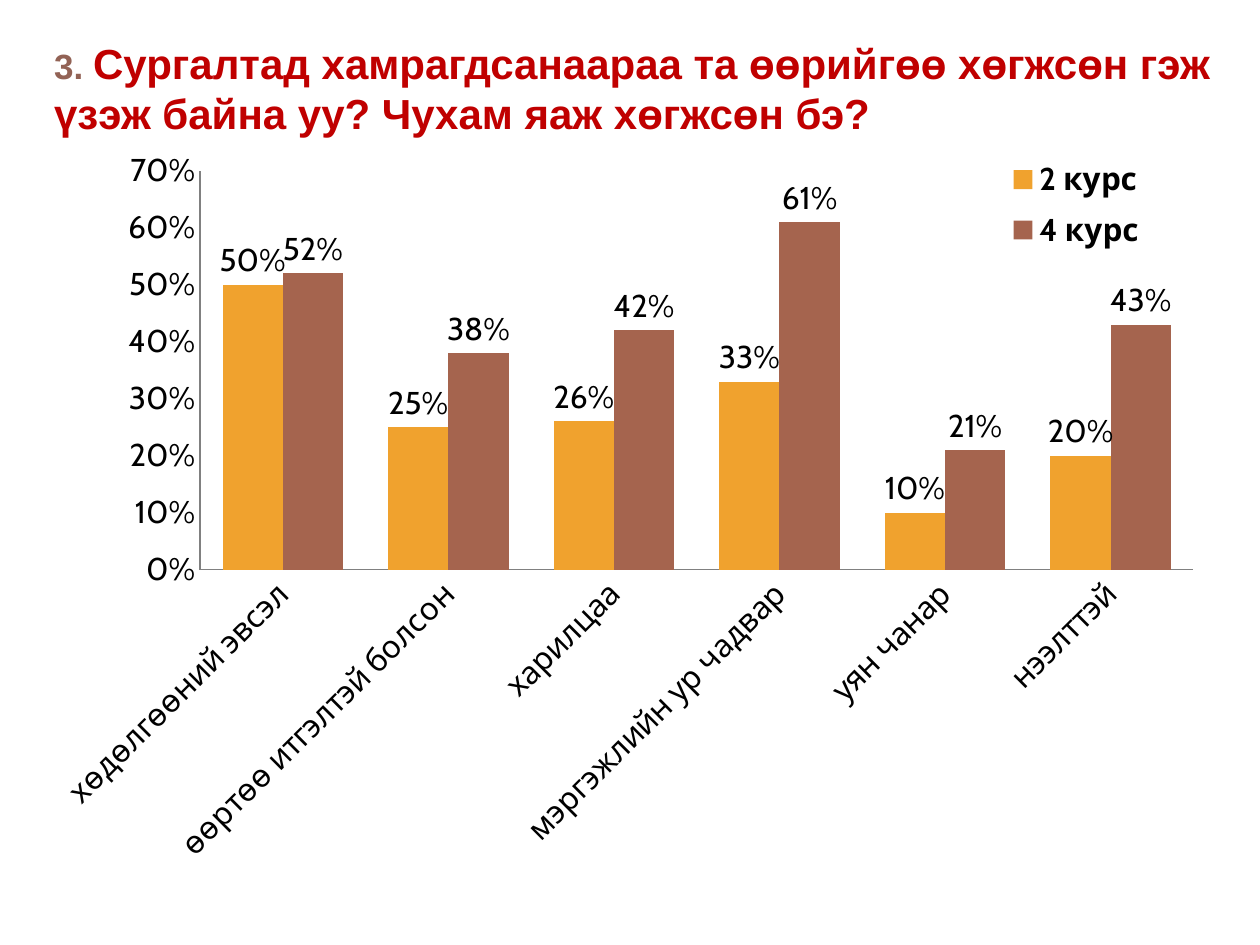
import pptx
import pptx.chart.data
import pptx.dml.color
import pptx.enum.chart
import pptx.enum.text
import pptx.oxml
import pptx.oxml.ns
import pptx.util

RGBColor = pptx.dml.color.RGBColor
BLACK = RGBColor(0x00, 0x00, 0x00)
GRAY = RGBColor(0x80, 0x80, 0x80)
TAUPE = RGBColor(0x92, 0x62, 0x55)
RED = RGBColor(0xC0, 0x00, 0x00)
ORANGE = RGBColor(0xF0, 0xA2, 0x2E)
BROWN = RGBColor(0xA5, 0x64, 0x4E)

WIDTH = pptx.util.Inches(10)
HEIGHT = pptx.util.Inches(7.5)

QUESTION = [
    ("3. ", 20, TAUPE),
    ("Сургалтад хамрагдсанаараа та өөрийгөө хөгжсөн гэж үзэж байна уу? "
     "Чухам яаж хөгжсөн бэ?", 24, RED),
]
SKILLS = ["хөдөлгөөний эвсэл", "өөртөө итгэлтэй болсон", "харилцаа",
          "мэргэжлийн ур чадвар", "уян чанар", "нээлттэй"]
COURSES = [
    ("2 курс", ORANGE, [0.50, 0.25, 0.26, 0.33, 0.10, 0.20]),
    ("4 курс", BROWN, [0.52, 0.38, 0.42, 0.61, 0.21, 0.43]),
]


def share_box(left, top, width, height):
    """Turn shares of the slide into lengths."""
    return (round(left * WIDTH), round(top * HEIGHT),
            round(width * WIDTH), round(height * HEIGHT))


def add_title(slide, box):
    title = slide.shapes.title
    title.left, title.top, title.width, title.height = box
    frame = title.text_frame
    frame.word_wrap = True
    frame.auto_size = pptx.enum.text.MSO_AUTO_SIZE.SHAPE_TO_FIT_TEXT
    frame.vertical_anchor = pptx.enum.text.MSO_ANCHOR.TOP
    paragraph = frame.paragraphs[0]
    paragraph.alignment = pptx.enum.text.PP_ALIGN.LEFT
    for text, size, color in QUESTION:
        run = paragraph.add_run()
        run.text = text
        run.font.name = "Arial"
        run.font.bold = True
        run.font.size = pptx.util.Pt(size)
        run.font.color.rgb = color


def manual_layout(left, top, width, height, inner=False):
    """Make a layout element from shares of the chart's size."""
    target = '<c:layoutTarget val="inner"/>' if inner else ""
    values = {"x": left, "y": top, "w": width, "h": height}
    sizes = "".join(f'<c:{name} val="{value}"/>' for name, value in values.items())
    return pptx.oxml.parse_xml(
        f'<c:layout {pptx.oxml.ns.nsdecls("c")}><c:manualLayout>{target}'
        '<c:xMode val="edge"/><c:yMode val="edge"/>'
        f'{sizes}</c:manualLayout></c:layout>')


def remove_layout(element):
    for layout in element.findall(pptx.oxml.ns.qn("c:layout")):
        element.remove(layout)


def place_plot(chart, *shares):
    plot_area = chart.plots[0]._element.getparent()
    remove_layout(plot_area)
    plot_area.insert(0, manual_layout(*shares, inner=True))


def add_legend(chart, *shares):
    chart.has_legend = True
    legend = chart.legend
    legend.position = pptx.enum.chart.XL_LEGEND_POSITION.BOTTOM
    legend.include_in_layout = False
    legend.font.bold = True
    element = legend._element
    remove_layout(element)
    position = element.find(pptx.oxml.ns.qn("c:legendPos"))
    position.addnext(manual_layout(*shares))


def format_axes(chart):
    for axis in (chart.category_axis, chart.value_axis):
        axis.has_major_gridlines = False
        axis.major_tick_mark = pptx.enum.chart.XL_TICK_MARK.NONE
        axis.minor_tick_mark = pptx.enum.chart.XL_TICK_MARK.NONE
        axis.format.line.color.rgb = GRAY
        axis.format.line.width = pptx.util.Pt(0.75)
    value_axis = chart.value_axis
    value_axis.minimum_scale = 0
    value_axis.maximum_scale = 0.7
    value_axis.major_unit = 0.1
    value_axis.tick_labels.number_format = "0%"
    value_axis.tick_labels.number_format_is_linked = False
    labels = chart.category_axis.tick_labels
    labels.font.size = pptx.util.Pt(18)
    properties = chart.category_axis._element.find(
        pptx.oxml.ns.qn("c:txPr")).find(pptx.oxml.ns.qn("a:bodyPr"))
    properties.set("rot", str(-45 * 60000))
    properties.set("vert", "horz")


def format_bars(plot):
    plot.gap_width = 75
    plot.overlap = 0
    plot.vary_by_categories = False
    for series, (_, color, _) in zip(plot.series, COURSES):
        series.format.fill.solid()
        series.format.fill.fore_color.rgb = color
        series.invert_if_negative = False
        labels = series.data_labels
        labels.show_value = True
        labels.number_format = "0%"
        labels.number_format_is_linked = False
        labels.position = pptx.enum.chart.XL_LABEL_POSITION.OUTSIDE_END


def add_skill_chart(slide, box):
    data = pptx.chart.data.CategoryChartData(number_format="0%")
    data.categories = SKILLS
    for name, _, values in COURSES:
        data.add_series(name, values)
    chart = slide.shapes.add_chart(
        pptx.enum.chart.XL_CHART_TYPE.COLUMN_CLUSTERED, *box, data).chart
    chart.has_title = False
    chart.font.name = "Cabin"
    chart.font.size = pptx.util.Pt(18)
    chart.font.color.rgb = BLACK
    format_axes(chart)
    format_bars(chart.plots[0])
    place_plot(chart, 0.142, 0.043, 0.837, 0.493)
    add_legend(chart, 0.81, 0.015, 0.14, 0.14)


def main():
    presentation = pptx.Presentation()
    presentation.slide_width = WIDTH
    presentation.slide_height = HEIGHT
    slide = presentation.slides.add_slide(presentation.slide_layouts[5])
    add_title(slide, share_box(0.033, 0.033, 0.942, 0.121))
    add_skill_chart(slide, share_box(0.025, 0.144, 0.942, 0.856))
    presentation.save("out.pptx")


if __name__ == "__main__":
    main()
